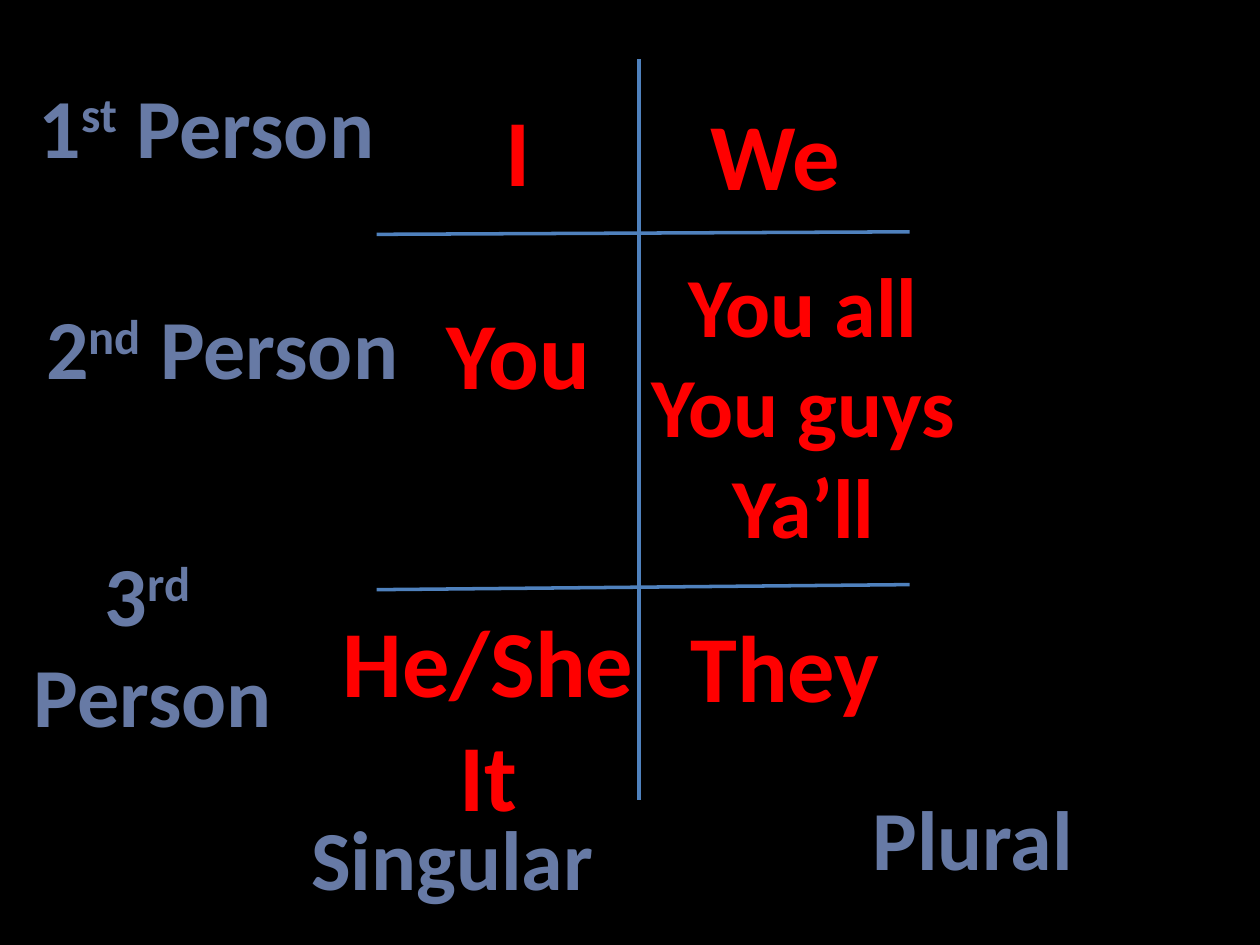
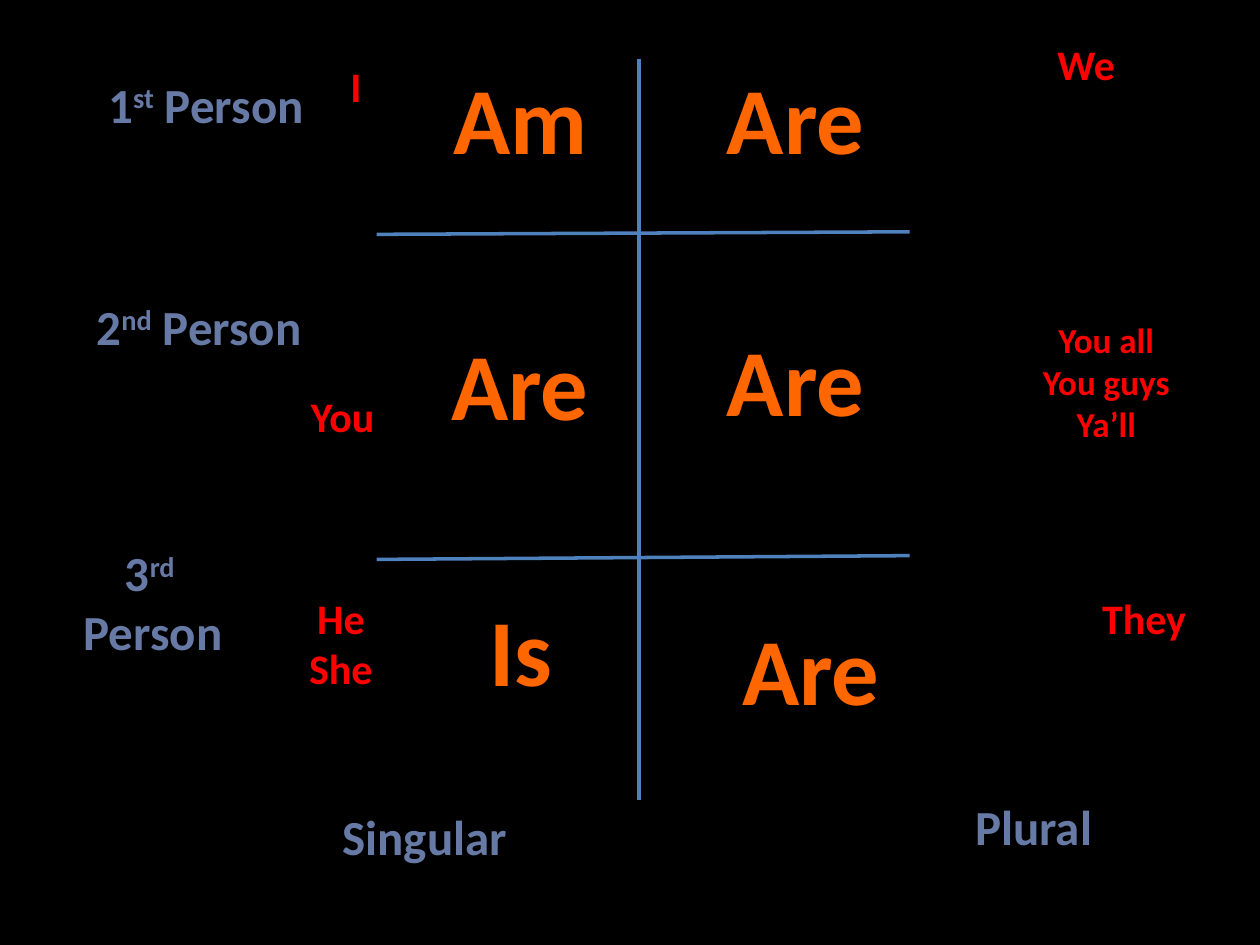
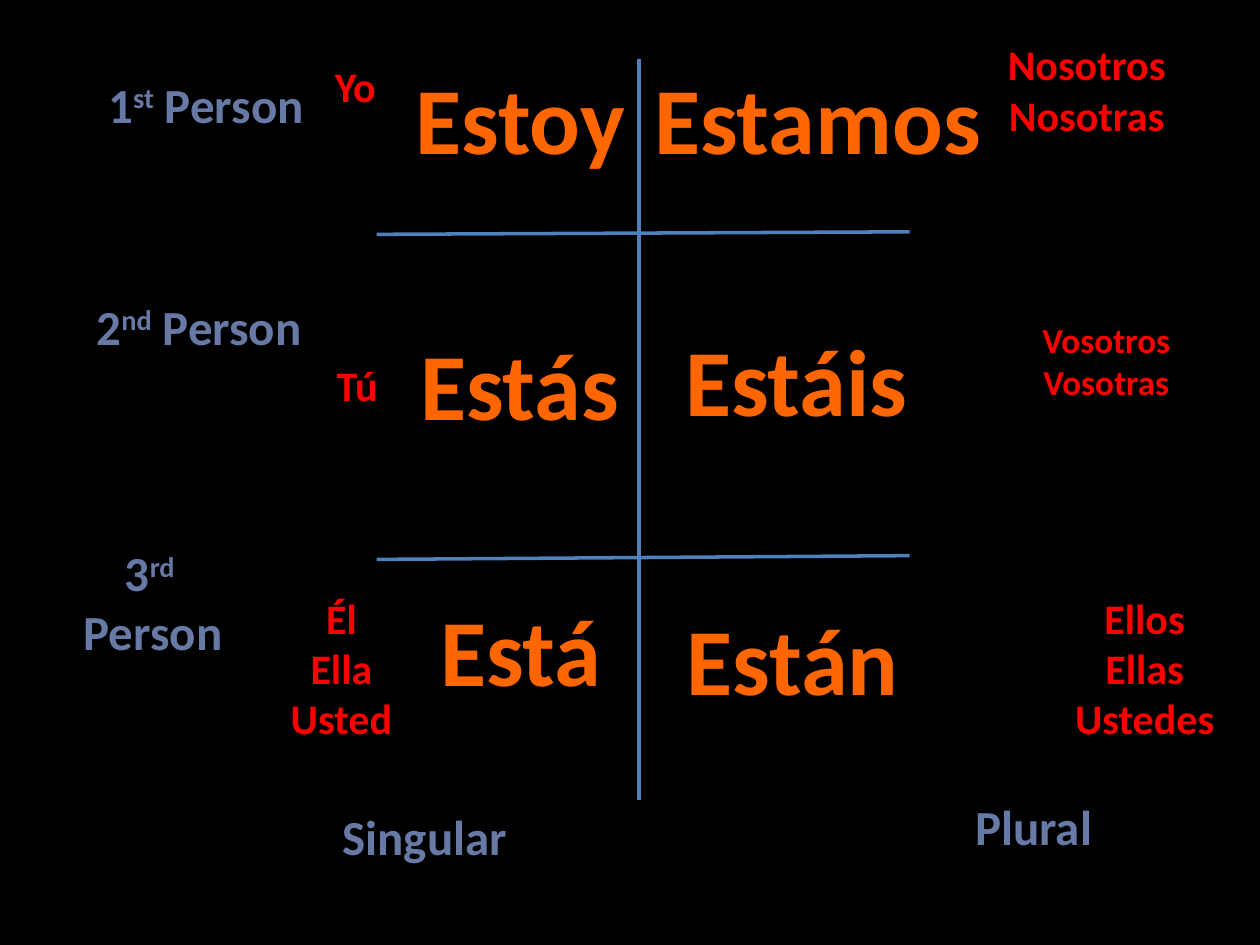
from lxml.etree import SubElement
from pptx import Presentation
from pptx.dml.color import RGBColor
from pptx.enum.shapes import MSO_CONNECTOR as Connector
from pptx.enum.text import MSO_AUTO_SIZE as AutoSize, PP_ALIGN as Align
from pptx.oxml.ns import qn
from pptx.util import Inches, Pt

FONT = "Calibri"
BLACK, RULE, LABEL, PRONOUN, VERB = "000000", "4F81BD", "677AA5", "FF0000", "FF6600"
FIRST, SECOND, THIRD = "1^st^ Person", "2^nd^ Person", "3^rd ^\nPerson"

LARGE_LABELS = [
    (FIRST, 0.16, 0.54, 2.96), (SECOND, 0.21, 2.3, 3.11), (THIRD, 0.15, 4.26, 2.13),
    ("Singular", 2.36, 6.35, 2.46), ("Plural", 6.81, 6.19, 1.82),
]
SMALL_LABELS = [
    (FIRST, 0.73, 0.54, 1.81), (SECOND, 0.63, 2.3, 1.9), (THIRD, 0.55, 4.26, 1.33),
    ("Singular", 2.61, 6.35, 1.52), ("Plural", 7.63, 6.27, 1.15),
]
ENGLISH_PRONOUNS = [
    ("I", 3.91, 0.68, 0.4), ("You", 3.41, 2.29, 1.41), ("He/She\nIt", 2.61, 4.74, 2.53),
    ("We", 5.52, 0.71, 1.27), ("They", 5.37, 4.78, 1.72),
]
CONJUGATIONS = [
    {
        "pronouns": [
            ("I", 2.68, 0.43, 0.29), ("You", 2.35, 3.05, 0.74), ("He\nShe", 2.35, 4.65, 0.71),
            ("We", 8.28, 0.26, 0.68), ("They", 8.64, 4.65, 0.88),
        ],
        "second_plural": ("You all\nYou guys\nYa’ll", 8.16, 2.48, 1.24),
        "verbs": [
            ("Am", 3.49, 0.43, 1.28), ("Are", 3.47, 2.54, 1.31), ("Is", 3.78, 4.65, 0.71),
            ("Are", 5.66, 0.43, 1.31), ("Are", 5.66, 2.51, 1.31), ("Are", 5.78, 4.8, 1.31),
        ],
    },
    {
        "pronouns": [
            ("Yo", 2.54, 0.43, 0.56), ("Tú", 2.56, 2.8, 0.55),
            ("Él\nElla\nUsted", 2.2, 4.65, 1.02), ("Nosotros\nNosotras", 7.89, 0.26, 1.47),
            ("Ellos\nEllas\nUstedes", 8.42, 4.65, 1.33),
        ],
        "second_plural": ("Vosotros\nVosotras", 8.16, 2.48, 1.24),
        "verbs": [
            ("Estoy", 3.18, 0.43, 1.9), ("Estás", 3.22, 2.54, 1.81), ("Está", 3.38, 4.65, 1.51),
            ("Estamos", 5.07, 0.43, 2.84), ("Estáis", 5.32, 2.51, 2), ("Están", 5.33, 4.72, 1.92),
        ],
    },
]


def rgb(value):
    return RGBColor.from_string(value)


def write(paragraph, text, *, size, color, raised=False):
    run = paragraph.add_run()
    run.text = text
    run.font.name, run.font.size, run.font.bold = FONT, Pt(size), True
    run.font.color.rgb = rgb(color)
    if raised:
        run.font._element.set("baseline", "30000")


class PersonChart:
    """Draws person-and-number charts in one shared style."""

    def __init__(self):
        self.deck = Presentation()
        self.deck.slide_width, self.deck.slide_height = Inches(10), Inches(7.5)
        background = self.deck.slide_master.background.fill
        background.solid()
        background.fore_color.rgb = rgb(BLACK)
        self.slide = None

    def new_slide(self):
        self.slide = self.deck.slides.add_slide(self.deck.slide_layouts[6])

    def line(self, *ends):
        rule = self.slide.shapes.add_connector(Connector.STRAIGHT, *map(Inches, ends))
        rule.line.color.rgb = rgb(RULE)
        rule.line.width = Pt(2)
        SubElement(rule._element.spPr, qn("a:effectLst"))

    def grid(self, lower_left, lower_right):
        self.line(2.99, 1.86, 7.22, 1.84)
        self.line(2.99, lower_left, 7.22, lower_right)
        self.line(5.07, 0.47, 5.07, 6.35)

    def words(self, entries, size, color):
        for text, left, top, width in entries:
            lines = text.split("\n")
            height = 0.1 + len(lines) * size * 1.22 / 72
            box = self.slide.shapes.add_textbox(*map(Inches, (left, top, width, height)))
            frame = box.text_frame
            frame.word_wrap = False
            frame.auto_size = AutoSize.SHAPE_TO_FIT_TEXT
            for index, content in enumerate(lines):
                paragraph = frame.add_paragraph() if index else frame.paragraphs[0]
                paragraph.alignment = Align.CENTER
                for order, part in enumerate(content.split("^")):
                    if part:
                        write(paragraph, part, size=size, color=color, raised=order % 2 == 1)


def main():
    chart = PersonChart()
    chart.new_slide()
    chart.grid(4.68, 4.64)
    chart.words(ENGLISH_PRONOUNS, 54, PRONOUN)
    chart.words([("You all\nYou guys\nYa’ll", 5.03, 1.96, 2.69)], 48, PRONOUN)
    chart.words(LARGE_LABELS, 48, LABEL)

    for conjugation in CONJUGATIONS:
        chart.new_slide()
        chart.grid(4.44, 4.41)
        chart.words(conjugation["pronouns"], 24, PRONOUN)
        chart.words([conjugation["second_plural"]], 20, PRONOUN)
        chart.words(SMALL_LABELS, 28, LABEL)
        chart.words(conjugation["verbs"], 54, VERB)

    chart.deck.save("out.pptx")


if __name__ == "__main__":
    main()
